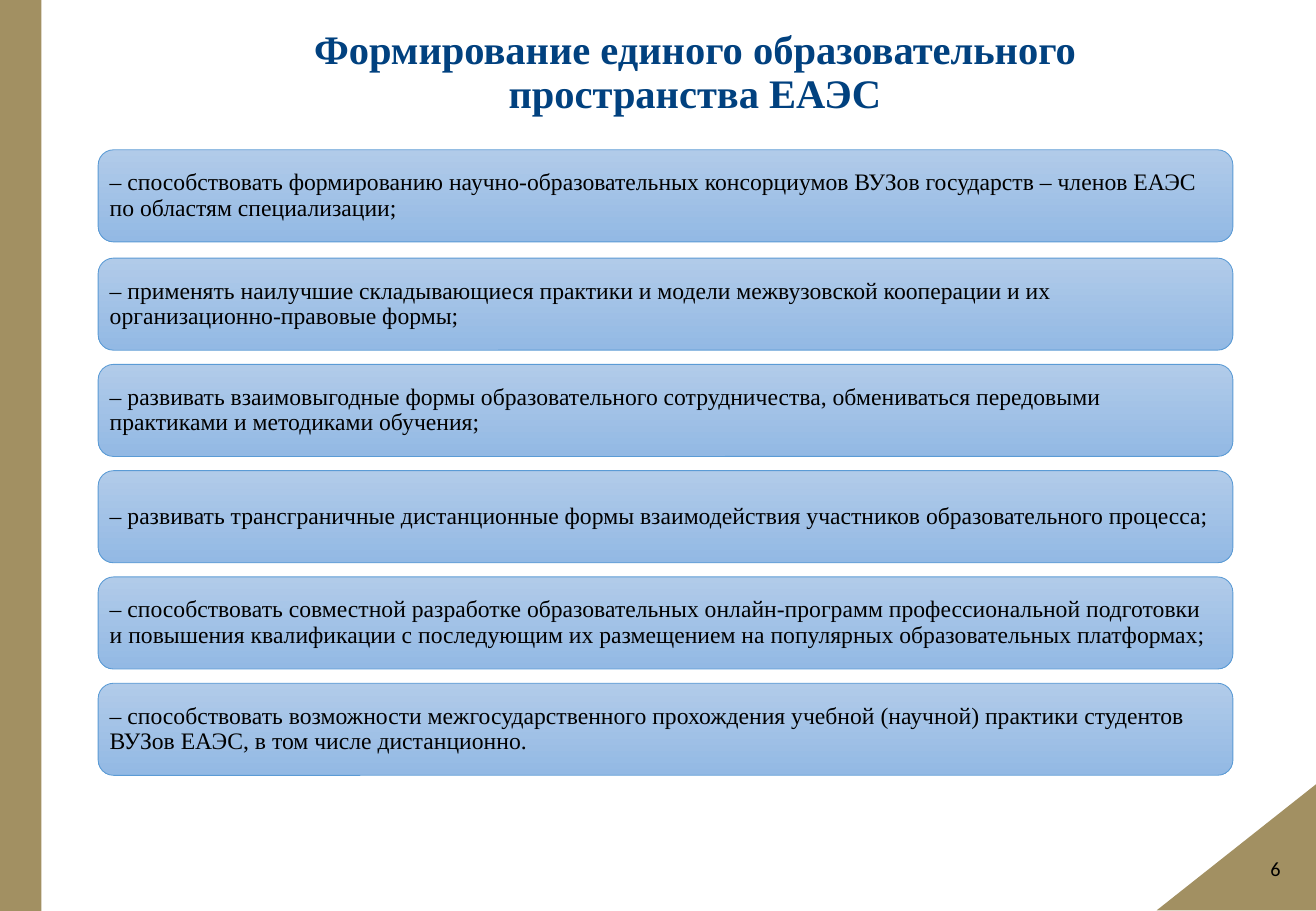
from pptx import Presentation
from pptx.dml.color import RGBColor
from pptx.enum.shapes import MSO_SHAPE
from pptx.enum.text import MSO_ANCHOR, MSO_AUTO_SIZE, PP_ALIGN
from pptx.util import Emu, Pt

RECT, ROUND_RECT = MSO_SHAPE.RECTANGLE, MSO_SHAPE.ROUNDED_RECTANGLE
TRIANGLE = MSO_SHAPE.RIGHT_TRIANGLE
MIDDLE, NO_FIT = MSO_ANCHOR.MIDDLE, MSO_AUTO_SIZE.NONE
LEFT, CENTER, RIGHT = PP_ALIGN.LEFT, PP_ALIGN.CENTER, PP_ALIGN.RIGHT

SERIF, SANS = "Times New Roman", "Calibri"
GOLD, NAVY, BLACK = "A29062", "01417F", "000000"
BAR_TOP, BAR_BOTTOM, BAR_LINE = "B1CBE9", "93B9E4", "5B9BD5"

TITLE = "Формирование единого образовательного пространства ЕАЭС"
GOALS = [
    "– способствовать формированию научно-образовательных консорциумов ВУЗов "
    "государств – членов ЕАЭС по областям специализации;",
    "– применять наилучшие складывающиеся практики и модели межвузовской "
    "кооперации и их организационно-правовые формы;",
    "– развивать взаимовыгодные формы образовательного сотрудничества, "
    "обмениваться передовыми практиками и методиками обучения;",
    "– развивать трансграничные дистанционные формы взаимодействия участников "
    "образовательного процесса;",
    "– способствовать совместной разработке образовательных онлайн-программ "
    "профессиональной подготовки\nи повышения квалификации с последующим их "
    "размещением на популярных образовательных платформах;",
    "– способствовать возможности межгосударственного прохождения учебной "
    "(научной) практики студентов ВУЗов ЕАЭС, в том числе дистанционно.",
]


def px(n):
    return Emu(n * 7620)  # 120 px to the inch


def color(value):
    return RGBColor.from_string(value)


def set_text(sp, text, size, font, fill, align, spacing=1.0, bold=False):
    tf = sp.text_frame
    tf.word_wrap = True
    tf.auto_size = NO_FIT
    tf.vertical_anchor = MIDDLE
    p = tf.paragraphs[0]
    p.alignment = align
    p.line_spacing = spacing
    for i, line in enumerate(text.split("\n")):
        if i:
            p.add_line_break()
        r = p.add_run()
        r.text = line
        r.font.size = Pt(size)
        r.font.name = font
        r.font.bold = bold
        r.font.color.rgb = color(fill)


def add_shape(s, kind, x, y, w, h):
    sp = s.shapes.add_shape(kind, px(x), px(y), px(w), px(h))
    sp.shadow.inherit = False
    return sp


def add_decor(s, kind, x, y, w, h, rotation=0):
    sp = add_shape(s, kind, x, y, w, h)
    sp.rotation = rotation
    sp.fill.solid()
    sp.fill.fore_color.rgb = color(GOLD)
    sp.line.fill.background()


def add_title(s, x, y, w, h):
    sp = s.shapes.title
    sp.left, sp.top, sp.width, sp.height = px(x), px(y), px(w), px(h)
    set_text(sp, TITLE, 24, SERIF, NAVY, CENTER, 0.9, True)


def add_bar(s, text, x, y, w, h):
    sp = add_shape(s, ROUND_RECT, x, y, w, h)
    sp.fill.gradient()
    sp.fill.gradient_angle = 270
    for stop, value in zip(sp.fill.gradient_stops, (BAR_TOP, BAR_BOTTOM)):
        stop.color.rgb = color(value)
    sp.line.color.rgb = color(BAR_LINE)
    sp.line.width = Pt(0.5)
    tf = sp.text_frame
    tf.margin_left = tf.margin_right = tf.margin_top = tf.margin_bottom = px(7)
    set_text(sp, text, 14, SERIF, BLACK, LEFT, 0.9)


def add_goals(s, x, y, w):
    bar_h, pitch, first_extra = 91, 105, 2
    for i, text in enumerate(GOALS):
        # The gap under the first bar is slightly wider
        top = y + i * pitch + (first_extra if i else 0)
        add_bar(s, text, x, top, w, bar_h)


def add_page_number(s, x, y, w, h):
    sp = s.shapes.add_textbox(px(x), px(y), px(w), px(h))
    set_text(sp, "6", 12, SANS, BLACK, RIGHT)


def main():
    prs = Presentation()
    prs.slide_width, prs.slide_height = px(1300), px(900)
    s = prs.slides.add_slide(prs.slide_layouts[5])

    # Gold corner and side stripe
    add_decor(s, TRIANGLE, 1159, 758, 125, 158, 270)
    add_decor(s, RECT, 0, 0, 41, 900)

    # Content
    add_title(s, 216, 37, 941, 71)
    add_goals(s, 97, 148, 1121)
    add_page_number(s, 1222, 834, 55, 48)
    prs.save("out.pptx")


if __name__ == "__main__":
    main()
